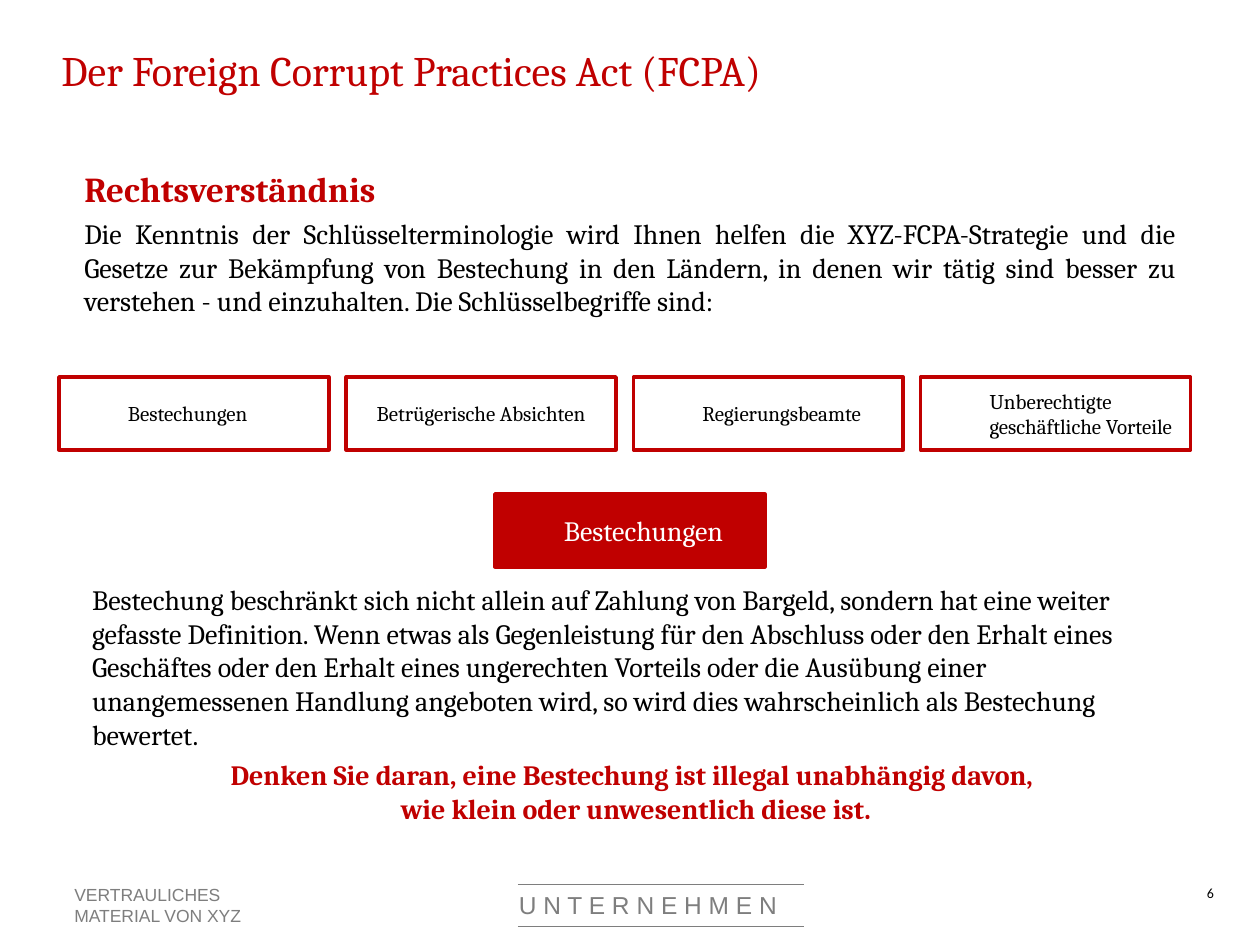
"""Build the FCPA training slide on bribery terms."""
from lxml import etree
from pptx import Presentation
from pptx import util as u
from pptx.dml.color import RGBColor
from pptx.enum import shapes, text
from pptx.oxml.ns import qn

RED = RGBColor(0xC0, 0x00, 0x00)
BLACK = RGBColor(0x00, 0x00, 0x00)
WHITE = RGBColor(0xFF, 0xFF, 0xFF)
GREY = RGBColor(0x7E, 0x7E, 0x7E)

LEFT = text.PP_ALIGN.LEFT
MID = text.PP_ALIGN.CENTER
FULL = text.PP_ALIGN.JUSTIFY

TERMS = (
    ("Bestechungen", LEFT),
    ("Betrügerische Absichten", MID),
    ("Regierungsbeamte", LEFT),
    ("Unberechtigte geschäftliche Vorteile", LEFT),
)
INTRO = (
    "Die Kenntnis der Schlüsselterminologie wird Ihnen helfen die "
    "XYZ-FCPA-Strategie und die Gesetze zur Bekämpfung von Bestechung in den "
    "Ländern, in denen wir tätig sind besser zu verstehen - und einzuhalten. "
    "Die Schlüsselbegriffe sind:"
)
SCOPE = (
    "Bestechung beschränkt sich nicht allein auf Zahlung von Bargeld, sondern hat eine weiter\v"
    "gefasste Definition. Wenn etwas als Gegenleistung für den Abschluss oder den Erhalt eines\v"
    "Geschäftes oder den Erhalt eines ungerechten Vorteils oder die Ausübung einer\v"
    "unangemessenen Handlung angeboten wird, so wird dies wahrscheinlich als Bestechung\v"
    "bewertet."
)
NOTE = (
    "Denken Sie daran, eine Bestechung ist illegal unabhängig davon,\v"
    "wie klein oder unwesentlich diese ist."
)


def put(obj, **vals):
    """Set each named value on an object."""
    for key, val in vals.items():
        setattr(obj, key, val)


def write(para, words, size, tint, face="Cambria", bold=False, left=0, first=0, **form):
    """Fill one paragraph with styled, indented text."""
    para.text = words
    props = para._p.get_or_add_pPr()
    props.set("marL", str(u.Cm(left)))
    props.set("indent", str(u.Cm(first)))
    put(para, **form)
    put(para.font, name=face, size=u.Pt(size), bold=bold)
    para.font.color.rgb = tint


def label(slide, area, *paras, wrap=True):
    """Add a text box without margins and write its paragraphs."""
    frame = slide.shapes.add_textbox(*map(u.Cm, area)).text_frame
    put(frame, word_wrap=wrap, margin_left=0, margin_right=0,
        margin_top=0, margin_bottom=0)
    for num, form in enumerate(paras):
        para = frame.add_paragraph() if num else frame.paragraphs[0]
        write(para, **form)


def box(slide, left, top, words, size, tint, align=LEFT, fill=None):
    """Add a red framed box for one term."""
    shape = slide.shapes.add_shape(
        shapes.MSO_SHAPE.RECTANGLE, *map(u.Cm, (left, top, 5.44, 1.47)))
    shape.shadow.inherit = False
    if fill is None:
        shape.fill.background()
    else:
        shape.fill.solid()
        shape.fill.fore_color.rgb = fill
    shape.line.color.rgb = RED
    shape.line.width = u.Pt(2)
    frame = shape.text_frame
    put(frame, word_wrap=True, vertical_anchor=text.MSO_ANCHOR.MIDDLE)
    pad = 1.14 if align == LEFT else 0
    write(frame.paragraphs[0], words, size, tint, left=pad, alignment=align)


def rule(slide, top):
    """Draw a thin grey footer line."""
    line = slide.shapes.add_connector(
        shapes.MSO_CONNECTOR.STRAIGHT, *map(u.Cm, (10.44, top, 16.21, top)))
    line.line.color.rgb = GREY
    line.line.width = u.Pt(0.5)
    etree.SubElement(line._element.spPr, qn("a:effectLst"))


def footer(slide):
    """Add the confidentiality note, the mark and the page number."""
    for top in (17.83, 18.67):
        rule(slide, top)
    label(slide, (1.5, 17.83, 3.53, 0.89),
          dict(words="VERTRAULICHES\vMATERIAL VON XYZ", size=10, tint=GREY, face="Arial"))
    label(slide, (10.46, 17.96, 5.69, 0.64),
          dict(words="U N T E R N E H M E N", size=14, tint=GREY, face="Arial",
               line_spacing=u.Pt(16.5)), wrap=False)
    label(slide, (24.33, 17.83, 0.2, 0.35),
          dict(words="6", size=8, tint=BLACK, face="Calibri"), wrap=False)


def main():
    """Build and save the slide."""
    deck = Presentation()
    put(deck, slide_width=u.Cm(25.4), slide_height=u.Cm(19.05))
    slide = deck.slides.add_slide(deck.slide_layouts[6])
    label(slide, (1.24, 0.9, 15.88, 1.1),
          dict(words="Der Foreign Corrupt Practices Act (FCPA)", size=24, tint=RED))
    label(slide, (1.7, 3.38, 22.02, 3.1),
          dict(words="Rechtsverständnis", size=20, tint=RED, bold=True),
          dict(words=INTRO, size=16, tint=BLACK, alignment=FULL, space_before=u.Pt(4)))
    for num, (term, align) in enumerate(TERMS):
        box(slide, 1.19 + num * 5.79, 7.6, term, 12, BLACK, align)
    box(slide, 9.98, 9.96, "Bestechungen", 16, WHITE, fill=RED)
    label(slide, (1.68, 11.75, 22.04, 4.9),
          dict(words=SCOPE, size=16, tint=BLACK, left=0.18),
          dict(words=NOTE, size=16, tint=RED, bold=True, left=6.4, first=-3.43,
               space_before=u.Pt(4)))
    footer(slide)
    deck.save("out.pptx")


if __name__ == "__main__":
    main()
